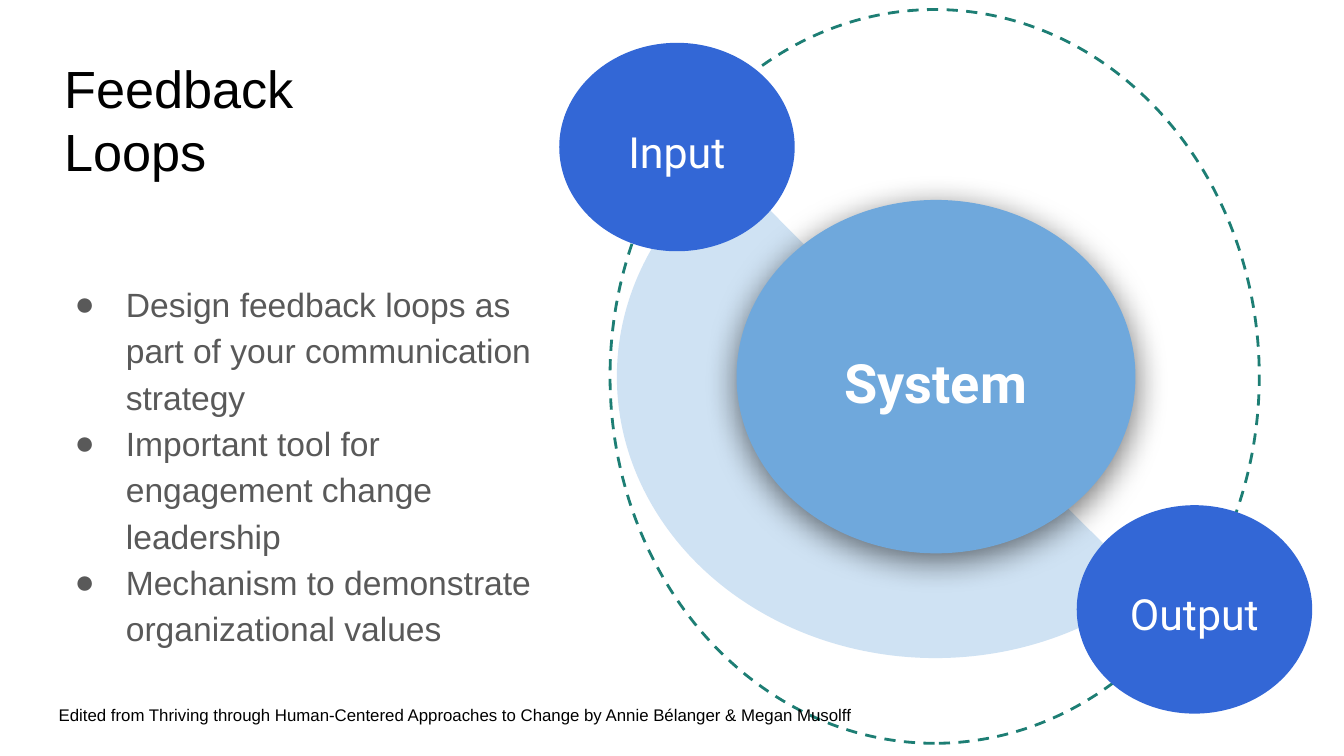
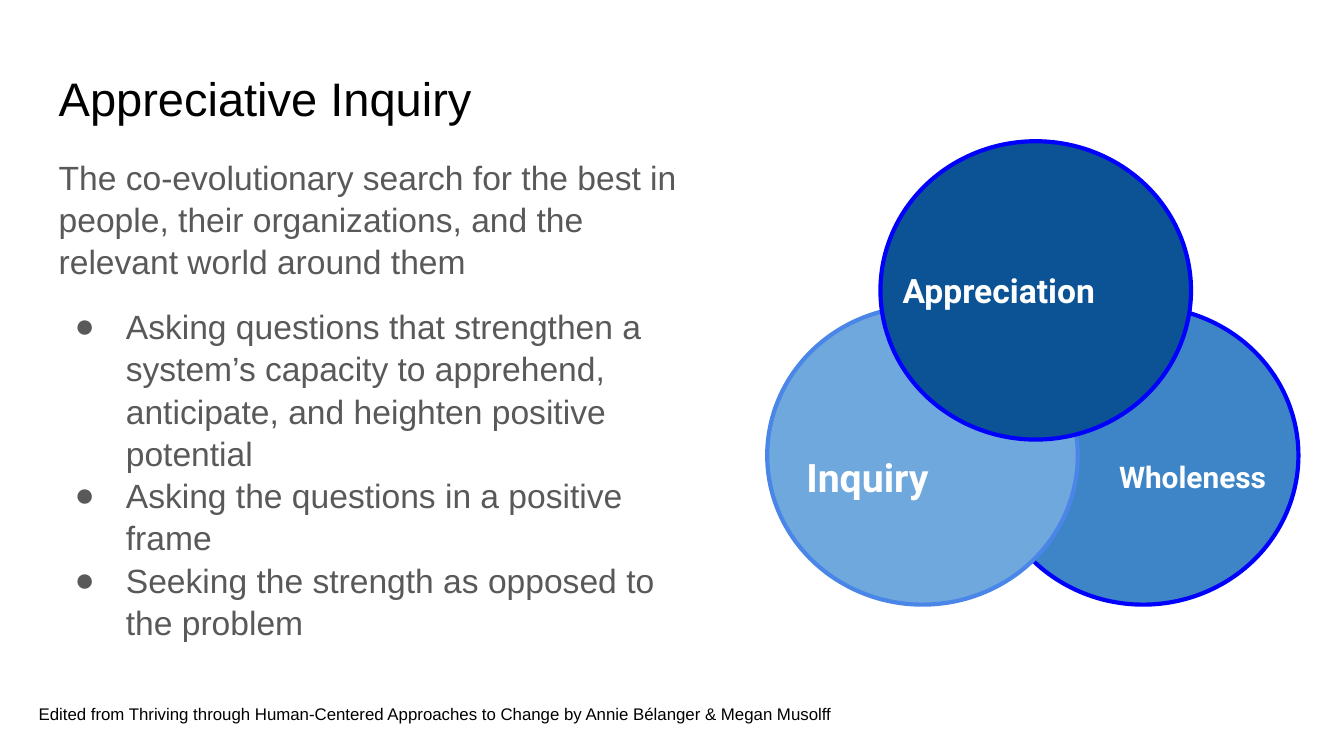
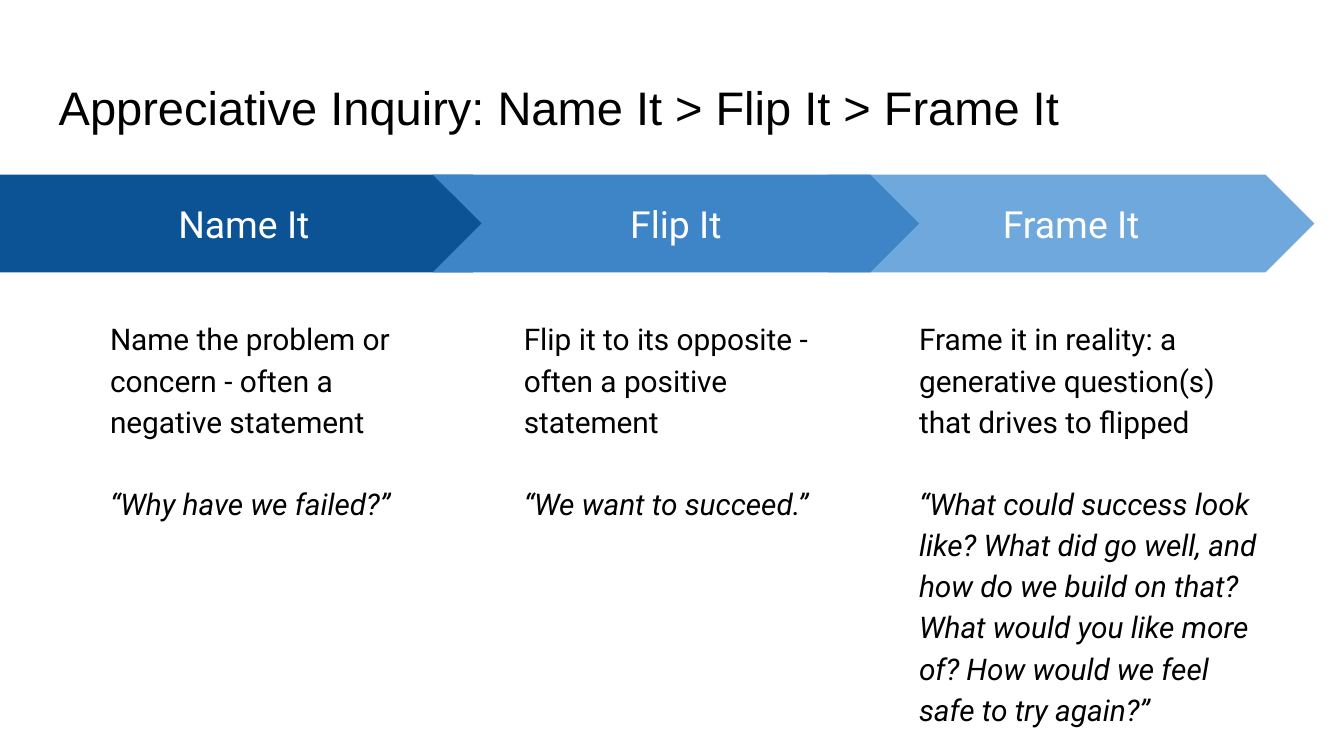
from dataclasses import dataclass
from typing import Optional

import lxml.etree
import pptx
import pptx.dml.color
import pptx.enum.dml
import pptx.enum.shapes
import pptx.enum.text
import pptx.oxml.ns
import pptx.util

Cm = pptx.util.Cm
Pt = pptx.util.Pt
GEOMETRY = pptx.enum.shapes.MSO_SHAPE
ALIGN = pptx.enum.text.PP_ALIGN
MIDDLE = pptx.enum.text.MSO_ANCHOR.MIDDLE
TOP = pptx.enum.text.MSO_ANCHOR.TOP

# Shared look
SANS, ROUND = "Arial", "Roboto"
BLACK, WHITE, GREY, TEAL = "000000", "FFFFFF", "595959", "1D7E74"
NAVY, MID_BLUE, SKY, PALE = "0B5394", "3D85C6", "6FA8DC", "CFE2F3"
ROYAL, PURE_BLUE, CORNFLOWER = "3367D6", "0000FF", "4A86E8"
CREDIT = ("Edited from Thriving through Human-Centered Approaches to Change "
          "by Annie Bélanger & Megan Musolff")


@dataclass(frozen=True)
class Box:
    """A frame in centimetres."""
    left: float
    top: float
    width: float
    height: float

    def lengths(self) -> tuple:
        return Cm(self.left), Cm(self.top), Cm(self.width), Cm(self.height)

    def centred(self, width: float, height: float) -> "Box":
        return Box(self.left + (self.width - width) / 2,
                   self.top + (self.height - height) / 2, width, height)


@dataclass(frozen=True)
class Style:
    size: float
    color: str = BLACK
    font: str = SANS
    bold: bool = False
    italic: bool = False
    spacing: Optional[float] = None
    align: Optional[ALIGN] = None


@dataclass(frozen=True)
class Para:
    text: str
    style: Style
    bullet: bool = False
    before: float = 0


@dataclass(frozen=True)
class LoopNode:
    name: str
    oval: Box
    label_width: float
    label_height: float
    fill: str
    size: float
    bold: bool = False
    shadow: bool = False


@dataclass(frozen=True)
class VennCircle:
    name: str
    left: float
    top: float
    fill: str
    outline: str
    label: Box
    size: float


@dataclass(frozen=True)
class Step:
    name: str
    geometry: GEOMETRY
    left: float
    width: float
    fill: str
    text_left: float
    text_width: float
    meaning: str
    quote: str


def rgb(color: str) -> pptx.dml.color.RGBColor:
    return pptx.dml.color.RGBColor.from_string(color)


def add_xml(parent, tag: str, **attributes: str):
    return lxml.etree.SubElement(parent, pptx.oxml.ns.qn(tag), attributes)


def add_bullet(paragraph, color: str) -> None:
    properties = paragraph._p.get_or_add_pPr()
    properties.set("marL", str(Cm(1.27)))
    properties.set("indent", str(Cm(-0.97)))
    add_xml(add_xml(properties, "a:buClr"), "a:srgbClr", val=color)
    add_xml(properties, "a:buFont", typeface=SANS)
    add_xml(properties, "a:buChar", char="●")


def write(frame, paras: list[Para], anchor=TOP) -> None:
    frame.word_wrap = True
    frame.vertical_anchor = anchor
    frame.margin_left = frame.margin_right = Cm(0.25)
    frame.margin_top = frame.margin_bottom = Cm(0.25)
    frame.text = "\n".join(para.text for para in paras)
    for paragraph, para in zip(frame.paragraphs, paras):
        style = para.style
        paragraph.alignment = style.align
        paragraph.line_spacing = style.spacing
        paragraph.space_before = Pt(para.before)
        if para.bullet:
            add_bullet(paragraph, style.color)
        for run in paragraph.runs:
            run.font.name = style.font
            run.font.size = Pt(style.size)
            run.font.bold = style.bold
            run.font.italic = style.italic
            run.font.color.rgb = rgb(style.color)


def add_text(slide, box: Box, paras: list[Para], anchor=TOP):
    text_box = slide.shapes.add_textbox(*box.lengths())
    write(text_box.text_frame, paras, anchor)
    return text_box


def add_figure(slide, geometry: GEOMETRY, box: Box, fill: Optional[str] = None,
               outline: Optional[str] = None, weight: float = 0):
    figure = slide.shapes.add_shape(geometry, *box.lengths())
    figure.shadow.inherit = False
    if fill:
        figure.fill.solid()
        figure.fill.fore_color.rgb = rgb(fill)
    else:
        figure.fill.background()
    if outline:
        figure.line.color.rgb = rgb(outline)
        figure.line.width = Pt(weight)
    else:
        figure.line.fill.background()
    return figure


def add_soft_shadow(figure) -> None:
    effects = figure._element.spPr.find(pptx.oxml.ns.qn("a:effectLst"))
    shadow = add_xml(effects, "a:outerShdw", blurRad=str(Pt(18)), dist=str(Pt(4)),
                     dir="5400000", algn="bl", rotWithShape="0")
    add_xml(add_xml(shadow, "a:srgbClr", val=BLACK), "a:alpha", val="55000")


def add_title(slide, box: Box, title: str, size: float = 25.2) -> None:
    add_text(slide, box, [Para(title, Style(size))])


def add_credit(slide, box: Box) -> None:
    credit = add_text(slide, box, [Para(CREDIT, Style(9))])
    credit.text_frame.auto_size = pptx.enum.text.MSO_AUTO_SIZE.SHAPE_TO_FIT_TEXT


def add_loop_node(slide, node: LoopNode) -> None:
    oval = add_figure(slide, GEOMETRY.OVAL, node.oval, node.fill)
    if node.shadow:
        add_soft_shadow(oval)
    label = add_figure(slide, GEOMETRY.RECTANGLE,
                       node.oval.centred(node.label_width, node.label_height), node.fill)
    style = Style(node.size, WHITE, ROUND, node.bold, spacing=1.15, align=ALIGN.CENTER)
    write(label.text_frame, [Para(node.name, style)], MIDDLE)


def add_venn_circle(slide, circle: VennCircle) -> None:
    add_figure(slide, GEOMETRY.OVAL, Box(circle.left, circle.top, 5.87, 5.64),
               circle.fill, circle.outline, 2.25)
    style = Style(circle.size, WHITE, ROUND, bold=True, spacing=1.15)
    add_text(slide, circle.label, [Para(circle.name, style)], MIDDLE)


def add_step(slide, step: Step) -> None:
    arrow = add_figure(slide, step.geometry, Box(step.left, 3.3, step.width, 1.85), step.fill)
    heading = Style(20, WHITE, ROUND, align=ALIGN.CENTER)
    write(arrow.text_frame, [Para(step.name, heading)], MIDDLE)
    add_text(slide, Box(step.text_left, 5.72, step.text_width, 7.26), [
        Para(step.meaning, Style(16, font=ROUND, spacing=1.15)),
        Para(step.quote, Style(16, font=ROUND, italic=True, spacing=1.15), before=22),
    ])


LOOP_NODES = [
    LoopNode("System", Box(13.92, 3.78, 7.54, 6.68), 5.59, 3.05, SKY, 29, bold=True, shadow=True),
    LoopNode("Input", Box(10.57, 0.81, 4.45, 3.94), 3.18, 2.69, ROYAL, 23),
    LoopNode("Output", Box(20.35, 9.55, 4.45, 3.94), 3.18, 2.69, ROYAL, 23),
]
LOOP_POINTS = [
    "Design feedback loops as part of your communication strategy",
    "Important tool for engagement change leadership",
    "Mechanism to demonstrate organizational values",
]
INQUIRY_DEFINITION = ("The co-evolutionary search for the best in people, their organizations, "
                      "and the relevant world around them")
INQUIRY_POINTS = [
    "Asking questions that strengthen a system’s capacity to apprehend, anticipate, "
    "and heighten positive potential",
    "Asking the questions in a positive frame",
    "Seeking the strength as opposed to the problem",
]
VENN_CIRCLES = [
    VennCircle("Wholeness", 18.67, 5.79, MID_BLUE, PURE_BLUE, Box(20.9, 8.15, 3.4, 1.6), 16),
    VennCircle("Inquiry", 14.5, 5.79, SKY, CORNFLOWER, Box(14.99, 8.15, 3.4, 1.6), 21),
    VennCircle("Appreciation", 16.64, 2.67, NAVY, PURE_BLUE, Box(16.81, 4.62, 5.33, 1.6), 18),
]
# Back to front: each arrow point overlaps the next arrow
STEPS = [
    Step("Frame It", GEOMETRY.CHEVRON, 15.65, 9.19, SKY, 17.12, 7.04,
         "Frame it in reality: a generative question(s) that drives to flipped",
         "“What could success look like? What did go well, and how do we build on that? "
         "What would you like more of? How would we feel safe to try again?”"),
    Step("Name It ", GEOMETRY.PENTAGON, 0, 9.86, NAVY, 1.83, 6.22,
         "Name the problem or concern - often a negative statement",
         "“Why have we failed?”"),
    Step("Flip It", GEOMETRY.CHEVRON, 8.18, 9.19, MID_BLUE, 9.65, 6.22,
         "Flip it to its opposite - often a positive statement",
         "“We want to succeed.”"),
]


def build_feedback_loops(slide) -> None:
    add_title(slide, Box(0.97, 0.81, 5.99, 3.94), "Feedback Loops", 28)
    # Dashed orbit and the half disc inside it
    orbit = add_figure(slide, GEOMETRY.OVAL, Box(10.73, 0.98, 13.87, 12.27),
                       outline=TEAL, weight=1.5)
    orbit.rotation = 270
    orbit.line.dash_style = pptx.enum.dml.MSO_LINE.DASH
    half_disc = add_figure(slide, GEOMETRY.PIE, Box(11.66, 1.8, 12.04, 10.64), PALE)
    for index, degrees in enumerate((44.83, 225.18)):
        half_disc.adjustments[index] = degrees * 0.6
    for node in LOOP_NODES:
        add_loop_node(slide, node)
    style = Style(18, GREY, spacing=1.15)
    add_text(slide, Box(0.86, 5, 9.88, 7.67),
             [Para(point, style, bullet=True) for point in LOOP_POINTS])
    add_credit(slide, Box(0.86, 13.13, 15.93, 0.89))


def build_appreciative_inquiry(slide) -> None:
    add_title(slide, Box(0.86, 1.07, 23.67, 1.6), "Appreciative Inquiry")
    style = Style(18, GREY, spacing=1.05)
    points = [Para(point, style, bullet=True, before=0 if index else 12)
              for index, point in enumerate(INQUIRY_POINTS)]
    add_text(slide, Box(0.86, 2.67, 12.7, 10.44), [Para(INQUIRY_DEFINITION, style), *points])
    for circle in VENN_CIRCLES:
        add_venn_circle(slide, circle)
    add_credit(slide, Box(0.48, 13.11, 16.87, 0.89))


def build_name_flip_frame(slide) -> None:
    add_title(slide, Box(0.86, 1.24, 23.67, 1.6),
              "Appreciative Inquiry: Name It > Flip It > Frame It")
    for step in STEPS:
        add_step(slide, step)


def main() -> None:
    deck = pptx.Presentation()
    deck.slide_width, deck.slide_height = Cm(25.4), Cm(14.29)
    for build in (build_feedback_loops, build_appreciative_inquiry, build_name_flip_frame):
        build(deck.slides.add_slide(deck.slide_layouts[6]))
    deck.save("out.pptx")


if __name__ == "__main__":
    main()
